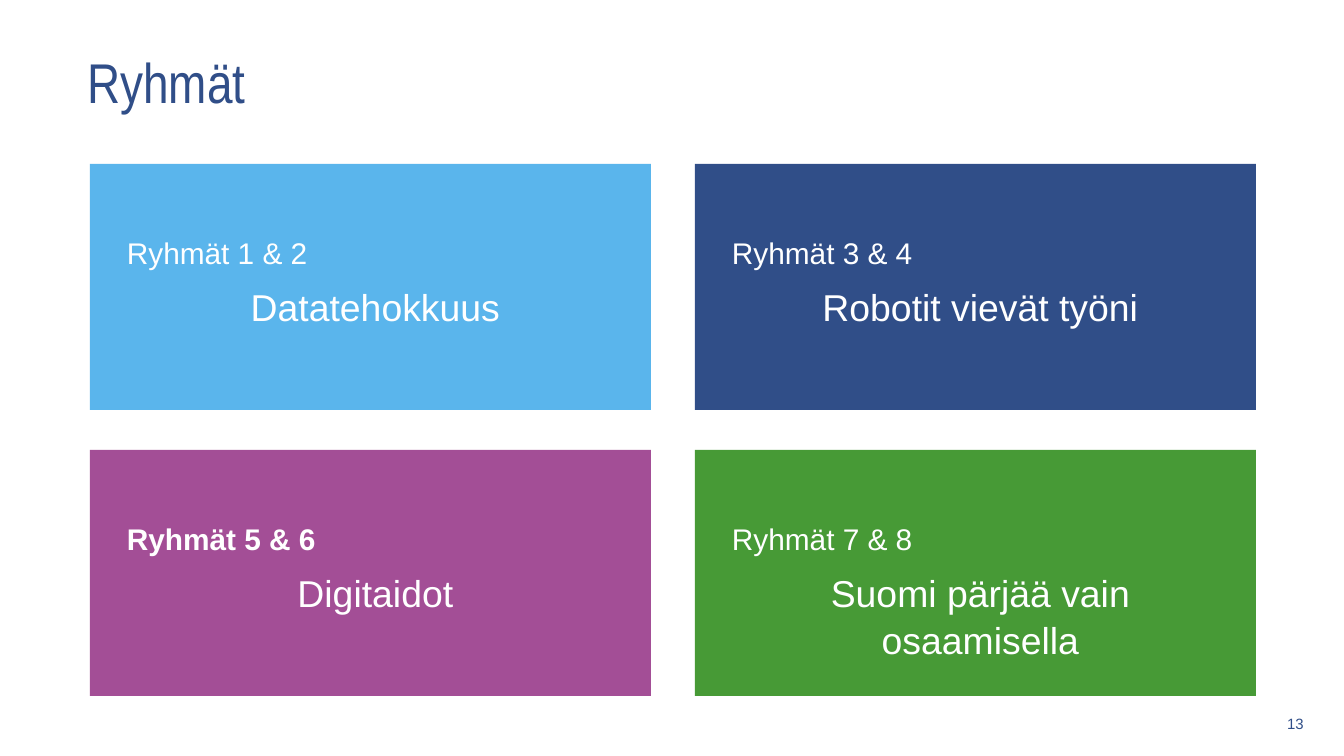
from pptx import Presentation
from pptx.dml.color import RGBColor
from pptx.enum.shapes import MSO_SHAPE
from pptx.enum.text import MSO_ANCHOR, PP_ALIGN
from pptx.util import Emu, Pt

RECT = MSO_SHAPE.RECTANGLE
TOP, MIDDLE = MSO_ANCHOR.TOP, MSO_ANCHOR.MIDDLE
LEFT, CENTER, RIGHT = PP_ALIGN.LEFT, PP_ALIGN.CENTER, PP_ALIGN.RIGHT

NAVY, WHITE = "304E88", "FFFFFF"
TITLE = "Ryhmät"
NUMBER = "13"
CARDS = [
    ("Ryhmät 1 & 2", "Datatehokkuus", "5AB5EC", False),
    ("Ryhmät 3 & 4", "Robotit vievät työni", NAVY, False),
    ("Ryhmät 5 & 6", "Digitaidot", "A34E96", True),
    ("Ryhmät 7 & 8", "Suomi pärjää vain osaamisella", "479A36", False),
]
COLS = 2
X, Y, WIDTH, HEIGHT = 90, 164, 561, 246
GAP_X, GAP_Y = 44, 40
INSETS = 37, 69, 27, 27


def px(n):
    return Emu(round(n * 914400 / 134.4))


def color(code):
    return RGBColor.from_string(code)


def style(par, text, size, code, align=LEFT, face="Arial", bold=False):
    par.text = text
    par.alignment = align
    font = par.font
    font.name, font.size, font.bold = face, Pt(size), bold
    font.color.rgb = color(code)


def label(box, text, size, align=LEFT, face="Arial"):
    frame = slide.shapes.add_textbox(*map(px, box)).text_frame
    frame.word_wrap = True
    frame.vertical_anchor = MIDDLE
    style(frame.paragraphs[0], text, size, NAVY, align, face)


def card(x, y, group, topic, fill, bold):
    shape = slide.shapes.add_shape(RECT, *map(px, (x, y, WIDTH, HEIGHT)))
    shape.shadow.inherit = False
    shape.fill.solid()
    shape.fill.fore_color.rgb = color(fill)
    shape.line.fill.background()
    frame = shape.text_frame
    frame.word_wrap = True
    frame.vertical_anchor = TOP
    (frame.margin_left, frame.margin_top,
     frame.margin_right, frame.margin_bottom) = map(px, INSETS)
    head, body = frame.paragraphs[0], frame.add_paragraph()
    style(head, group, 16, WHITE, bold=bold)
    style(body, topic, 20, WHITE, CENTER)
    for par in (head, body):
        par.space_after = Pt(6)
        par.line_spacing = 1.05


deck = Presentation()
deck.slide_width, deck.slide_height = px(1344), px(756)
slide = deck.slides.add_slide(deck.slide_layouts[6])

label((74, 16, 1085, 130), TITLE, 30, face="Arial Narrow")
label((1247, 708, 70, 32), NUMBER, 8, RIGHT)
for i, item in enumerate(CARDS):
    row, col = divmod(i, COLS)
    card(X + col * (WIDTH + GAP_X), Y + row * (HEIGHT + GAP_Y), *item)

deck.save("out.pptx")
